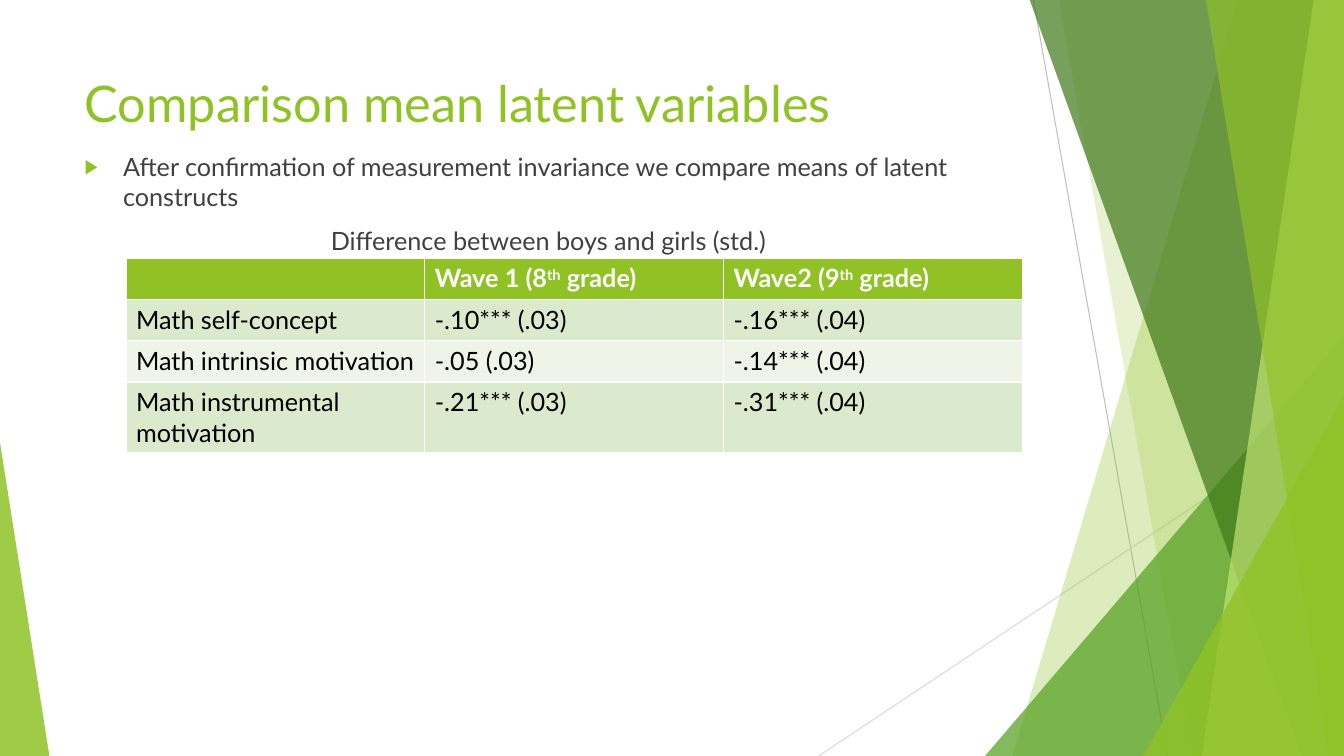
from lxml import etree
from pptx import Presentation
from pptx.dml.color import RGBColor
from pptx.enum.shapes import MSO_CONNECTOR, MSO_SHAPE
from pptx.enum.text import MSO_ANCHOR, MSO_AUTO_SIZE, PP_ALIGN
from pptx.oxml.ns import qn
from pptx.util import Inches, Pt

FONT = "Lato"
WHITE = RGBColor(0xFF, 0xFF, 0xFF)
BLACK = RGBColor(0x00, 0x00, 0x00)
TEXT = RGBColor(0x40, 0x40, 0x40)
LIME = RGBColor(0x90, 0xC2, 0x26)
GREEN = RGBColor(0x54, 0xA0, 0x21)
DARK = RGBColor(0x3F, 0x78, 0x19)
PALE = RGBColor(0xC0, 0xE4, 0x74)
ROW_ODD = RGBColor(0xDB, 0xE9, 0xCD)
ROW_EVEN = RGBColor(0xEE, 0xF4, 0xE8)
GREY = RGBColor(0xBF, 0xBF, 0xBF)
LIGHT_GREY = RGBColor(0xD9, 0xD9, 0xD9)

WIDTH, HEIGHT = 13.33, 7.5
HEADER = [[], ["Wave 1 (8", "th", " grade)"], ["Wave2 (9", "th", " grade)"]]
ROWS = [
    ["Math self-concept", "-.10*** (.03)", "-.16*** (.04)"],
    ["Math intrinsic motivation", "-.05 (.03)", "-.14*** (.04)"],
    ["Math instrumental motivation", "-.21*** (.03)", "-.31*** (.04)"],
]


def paint(sp, color, alpha):
    """Give a shape a see-through fill without outline or shadow."""
    sp.shadow.inherit = False
    sp.line.fill.background()
    sp.fill.solid()
    sp.fill.fore_color.rgb = color
    clr = sp.fill._xPr.find(qn("a:solidFill"))[0]
    etree.SubElement(clr, qn("a:alpha"), val=str(alpha * 1000))


def add_line(shapes, x1, y1, x2, y2, color):
    """Draw a thin straight line."""
    line = shapes.add_connector(
        MSO_CONNECTOR.STRAIGHT, Inches(x1), Inches(y1), Inches(x2), Inches(y2))
    line.line.color.rgb = color
    line.line.width = Pt(0.75)
    etree.SubElement(line._element.spPr, qn("a:effectLst"))


def add_band(shapes, top_x, bottom_x, color, alpha):
    """Draw a full-height band between a slanted edge and the right edge."""
    points = [(Inches(x), Inches(y)) for x, y in (
        (top_x, -0.01), (WIDTH, -0.01), (WIDTH, HEIGHT), (bottom_x, HEIGHT))]
    builder = shapes.build_freeform(*points[0], scale=1.0)
    builder.add_line_segments(points[1:], close=True)
    paint(builder.convert_to_shape(), color, alpha)


def add_corner(shapes, x, w, h, apex, color, alpha):
    """Draw a right triangle standing on the bottom edge."""
    sp = shapes.add_shape(MSO_SHAPE.ISOSCELES_TRIANGLE, Inches(x),
                          Inches(HEIGHT - h), Inches(w), Inches(h))
    sp.adjustments[0] = apex
    paint(sp, color, alpha)


def add_backdrop(shapes):
    """Draw the green facets, from back to front."""
    add_line(shapes, 10.25, 0, 11.58, HEIGHT, GREY)
    add_line(shapes, WIDTH, 4.03, 8.12, HEIGHT, LIGHT_GREY)
    add_band(shapes, 12.28, 10.04, LIME, 30)
    add_band(shapes, 10.5, 11.83, LIME, 20)
    add_corner(shapes, 9.77, 3.56, 4.17, 1, GREEN, 72)
    add_band(shapes, 10.21, 12.91, DARK, 70)
    add_band(shapes, 13.03, 11.92, PALE, 70)
    add_band(shapes, 11.96, 13.18, LIME, 65)
    add_corner(shapes, 11.34, 1.99, 3.57, 1, LIME, 80)
    add_corner(shapes, 0, 0.49, 3.11, 0, LIME, 85)


def add_run(p, text, size, color, bold=False):
    """Add one formatted run to a paragraph."""
    r = p.add_run()
    r.text = text
    r.font.name = FONT
    r.font.size = Pt(size)
    r.font.bold = bold
    r.font.color.rgb = color
    return r


def place(sp, x, y, w, h):
    """Move a placeholder to a box and return its text frame."""
    sp.left, sp.top, sp.width, sp.height = map(Inches, (x, y, w, h))
    tf = sp.text_frame
    tf.word_wrap = True
    tf.auto_size = MSO_AUTO_SIZE.NONE
    tf.vertical_anchor = MSO_ANCHOR.TOP
    return tf


def set_bullet(p, indent, char=None):
    """Set the indent and the bullet, or no bullet, of a paragraph."""
    pPr = p._p.get_or_add_pPr()
    pPr.set("marL", str(Inches(indent)))
    pPr.set("indent", str(-Inches(indent)))
    if char is None:
        etree.SubElement(pPr, qn("a:buNone"))
        return
    clr = etree.SubElement(pPr, qn("a:buClr"))
    etree.SubElement(clr, qn("a:srgbClr"), val=str(LIME))
    etree.SubElement(pPr, qn("a:buSzPct"), val="80000")
    etree.SubElement(pPr, qn("a:buFont"), typeface="Arial")
    etree.SubElement(pPr, qn("a:buChar"), char=char)


def fill_title(sp, x, y, w, h):
    """Write the slide title."""
    p = place(sp, x, y, w, h).paragraphs[0]
    p.alignment = PP_ALIGN.LEFT
    add_run(p, "Comparison mean latent variables", 36, LIME)


def fill_body(sp, x, y, w, h):
    """Write the bullet and the centred table caption."""
    tf = place(sp, x, y, w, h)
    point, caption = tf.paragraphs[0], tf.add_paragraph()
    for p in (point, caption):
        p.space_before = Pt(10)
    set_bullet(point, 0.38, "▶")
    add_run(point, "After confirmation of measurement invariance "
            "we compare means of latent constructs", 18, TEXT)
    caption.alignment = PP_ALIGN.CENTER
    set_bullet(caption, 0)
    add_run(caption, "Difference between boys and girls (std.)", 18, TEXT)


def add_results(shapes, x, y, w, row_h):
    """Add the table of mean differences."""
    n_rows, n_cols = len(ROWS) + 1, len(HEADER)
    table = shapes.add_table(n_rows, n_cols, Inches(x), Inches(y),
                             Inches(w), Inches(row_h * n_rows)).table
    rows = [HEADER] + [[[text] for text in row] for row in ROWS]
    for i, row in enumerate(rows):
        fill = LIME if i == 0 else ROW_ODD if i % 2 else ROW_EVEN
        for j, parts in enumerate(row):
            cell = table.cell(i, j)
            cell.fill.solid()
            cell.fill.fore_color.rgb = fill
            p = cell.text_frame.paragraphs[0]
            for text in parts:
                r = add_run(p, text, 18, BLACK if i else WHITE, i == 0)
                if text == "th":
                    r.font._element.set("baseline", "30000")


def main():
    """Build and save the slide."""
    prs = Presentation()
    prs.slide_width, prs.slide_height = Inches(WIDTH), Inches(HEIGHT)
    slide = prs.slides.add_slide(prs.slide_layouts[1])
    title, body = slide.placeholders
    add_backdrop(slide.shapes)
    fill_title(title, 0.74, 0.67, 9.4, 0.79)
    fill_body(body, 0.74, 1.45, 9.4, 5.15)
    add_results(slide.shapes, 1.25, 2.56, 8.89, 0.41)
    prs.save("out.pptx")


if __name__ == "__main__":
    main()
